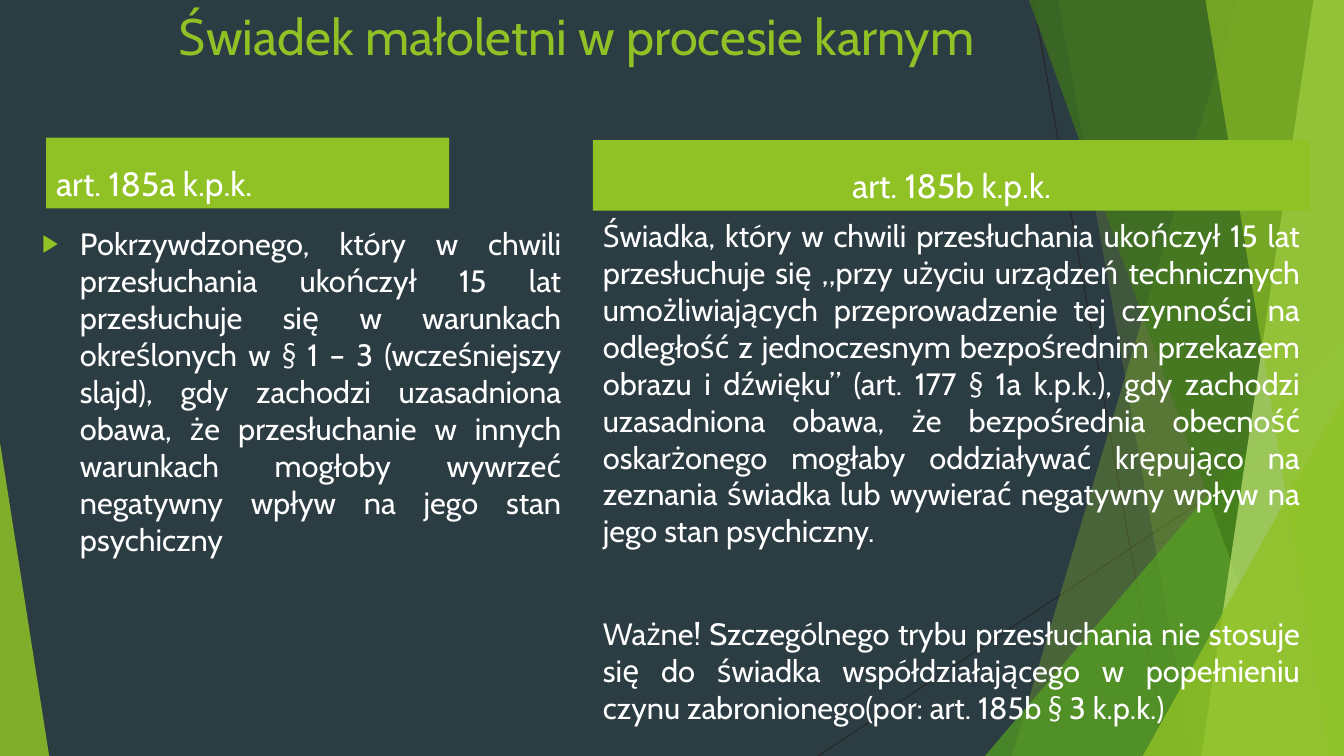
"""Build the slide on underage witnesses in criminal proceedings."""
from lxml.etree import SubElement
from pptx import Presentation
from pptx.dml.color import RGBColor
from pptx.enum.shapes import MSO_CONNECTOR as Connector, MSO_SHAPE as Shape
from pptx.enum.text import MSO_ANCHOR as Anchor, MSO_AUTO_SIZE as AutoSize, PP_ALIGN as Align
from pptx.oxml.ns import qn
from pptx.util import Cm, Pt

WIDTH, HEIGHT = 33.87, 19.05
BODY_SIZE = 22
BACKGROUND = RGBColor(0x2C, 0x3C, 0x43)
LIME = RGBColor(0x90, 0xC2, 0x26)
GREEN = RGBColor(0x54, 0xA0, 0x21)
FOREST = RGBColor(0x3F, 0x78, 0x19)
PALE = RGBColor(0xC0, 0xE4, 0x74)
CHARCOAL = RGBColor(0x26, 0x26, 0x26)
WHITE = RGBColor(0xFF, 0xFF, 0xFF)

TITLE = "Świadek małoletni w procesie karnym"
VICTIM = (
    "Pokrzywdzonego, który w chwili przesłuchania ukończył 15 lat przesłuchuje się "
    "w warunkach określonych w § 1 – 3 (wcześniejszy slajd), gdy zachodzi uzasadniona "
    "obawa, że przesłuchanie w innych warunkach mogłoby wywrzeć negatywny wpływ na jego "
    "stan psychiczny"
)
WITNESS = (
    "Świadka, który w chwili przesłuchania ukończył 15 lat przesłuchuje się „przy użyciu "
    "urządzeń technicznych umożliwiających przeprowadzenie tej czynności na odległość "
    "z jednoczesnym bezpośrednim przekazem obrazu i dźwięku” (art. 177 § 1a k.p.k.), gdy "
    "zachodzi uzasadniona obawa, że bezpośrednia obecność oskarżonego mogłaby oddziaływać "
    "krępująco na zeznania świadka lub wywierać negatywny wpływ na jego stan psychiczny."
)
WARNING = (
    "Ważne! Szczególnego trybu przesłuchania nie stosuje się do świadka współdziałającego "
    "w popełnieniu czynu zabronionego(por: art. 185b § 3 k.p.k.)"
)


def apply_format(target, values):
    """Set every attribute named in values on the target."""
    for name, value in values.items():
        setattr(target, name, value)


def paint(shape, color, opacity):
    """Give a shape a translucent fill without outline or shadow."""
    shape.shadow.inherit = False
    shape.line.fill.background()
    shape.fill.solid()
    shape.fill.fore_color.rgb = color
    color_element = shape.element.spPr.find(qn("a:solidFill"))[0]
    SubElement(color_element, qn("a:alpha"), val=str(opacity * 1000))


def add_line(group, start, end):
    """Add a thin dark line."""
    points = [Cm(value) for value in start + end]
    line = group.shapes.add_connector(Connector.STRAIGHT, *points)
    line.line.color.rgb = CHARCOAL
    line.line.width = Pt(0.75)
    SubElement(line.element.spPr, qn("a:effectLst"))


def add_facet(group, top, bottom, color, opacity):
    """Add a full-height facet that reaches the right edge."""
    builder = group.shapes.build_freeform(Cm(top), 0)
    corners = [(WIDTH, 0), (WIDTH, HEIGHT), (bottom, HEIGHT)]
    builder.add_line_segments([(Cm(x), Cm(y)) for x, y in corners])
    paint(builder.convert_to_shape(), color, opacity)


def add_triangle(group, left, top, width, apex, color, opacity):
    """Add a right triangle standing on the bottom edge."""
    box = [Cm(value) for value in (left, top, width, HEIGHT - top)]
    triangle = group.shapes.add_shape(Shape.ISOSCELES_TRIANGLE, *box)
    triangle.adjustments[0] = apex
    paint(triangle, color, opacity)


def add_decoration(slide):
    """Add the faceted backdrop behind the placeholders."""
    group = slide.shapes.add_group_shape()
    add_line(group, (26.04, 0), (29.41, HEIGHT))
    add_line(group, (WIDTH, 10.24), (20.62, HEIGHT))
    add_facet(group, 31.19, 25.5, LIME, 30)
    add_facet(group, 26.67, 30.05, LIME, 20)
    add_triangle(group, 24.82, 8.46, 9.05, 1, GREEN, 72)
    add_facet(group, 25.93, 32.79, FOREST, 70)
    add_facet(group, 33.1, 30.28, PALE, 70)
    add_facet(group, 30.38, 33.48, LIME, 65)
    add_triangle(group, 28.8, 9.98, 5.07, 1, LIME, 80)
    add_triangle(group, 0, 11.15, 1.24, 0, LIME, 85)
    slide.shapes.title.element.addprevious(group.element)


def set_bullet(paragraph, bulleted):
    """Set a green arrow bullet with a hanging indent, or none."""
    properties = paragraph._p.get_or_add_pPr()
    indent = Cm(0.95) if bulleted else 0
    properties.set("marL", str(indent))
    properties.set("indent", str(-indent))
    if bulleted:
        bullet_color = SubElement(properties, qn("a:buClr"))
        SubElement(bullet_color, qn("a:srgbClr"), val=str(LIME))
        SubElement(properties, qn("a:buSzPct"), val="80000")
        SubElement(properties, qn("a:buChar"), char="▶")
    else:
        SubElement(properties, qn("a:buNone"))


def fill_text(shape, box, texts, size, color=WHITE, align=Align.LEFT,
              anchor=Anchor.TOP, bulleted=False):
    """Place a placeholder and write its formatted paragraphs."""
    names = ("left", "top", "width", "height")
    apply_format(shape, dict(zip(names, map(Cm, box))))
    frame = shape.text_frame
    apply_format(frame, {"word_wrap": True, "auto_size": AutoSize.NONE,
                         "vertical_anchor": anchor})
    for index, text in enumerate(texts):
        paragraph = frame.add_paragraph() if index else frame.paragraphs[0]
        set_bullet(paragraph, bulleted)
        apply_format(paragraph, {"alignment": align, "space_before": Pt(47 if index else 0)})
        run = paragraph.add_run()
        run.text = text
        apply_format(run.font, {"name": "Cabin", "size": Pt(size), "bold": False})
        run.font.color.rgb = color


def add_header(shape, box, text, align):
    """Write a column header on a green bar."""
    shape.fill.solid()
    shape.fill.fore_color.rgb = LIME
    fill_text(shape, box, [text], 24, align=align, anchor=Anchor.BOTTOM)


def main():
    """Build and save the presentation."""
    presentation = Presentation()
    apply_format(presentation, {"slide_width": Cm(WIDTH), "slide_height": Cm(HEIGHT)})
    slide = presentation.slides.add_slide(presentation.slide_layouts[4])
    slide.background.fill.solid()
    slide.background.fill.fore_color.rgb = BACKGROUND
    add_decoration(slide)
    title, left_header, left_body, right_header, right_body = slide.placeholders
    fill_text(title, (4.24, 0, 23.5, 3.18), [TITLE], 36, LIME)
    add_header(left_header, (1.16, 3.47, 10.16, 1.78), "art. 185a k.p.k.", Align.LEFT)
    fill_text(left_body, (0.81, 5.54, 13.59, 10.97), [VICTIM], BODY_SIZE,
              align=Align.JUSTIFY, bulleted=True)
    add_header(right_header, (14.94, 3.53, 18.08, 1.78), "art. 185b k.p.k.", Align.CENTER)
    fill_text(right_body, (14.94, 5.33, 18.08, 13), [WITNESS, WARNING], BODY_SIZE,
              align=Align.JUSTIFY)
    presentation.save("out.pptx")


if __name__ == "__main__":
    main()
